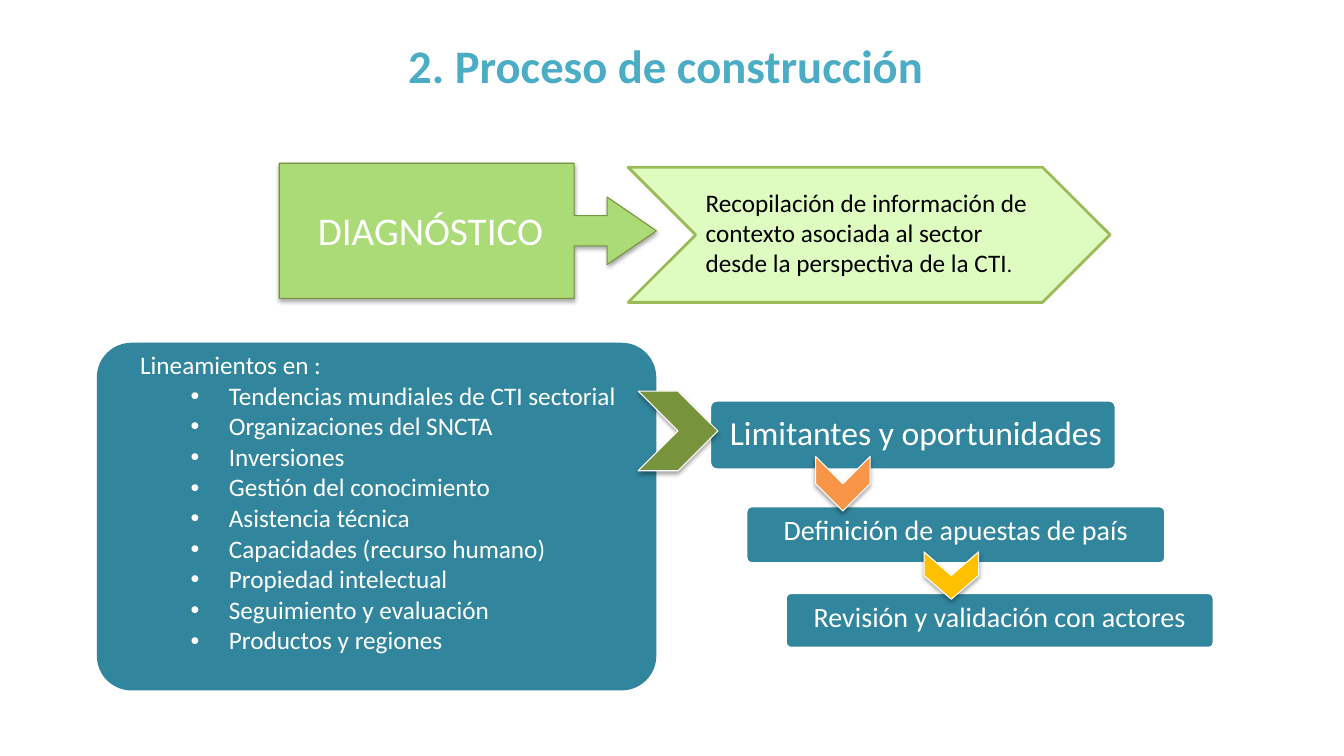
from pptx import Presentation
from pptx.util import Inches, Pt
from pptx.dml.color import RGBColor
from pptx.enum.shapes import MSO_SHAPE
from pptx.enum.text import MSO_ANCHOR, MSO_AUTO_SIZE, PP_ALIGN
from pptx.oxml import parse_xml
from pptx.oxml.ns import nsdecls
from lxml.etree import SubElement

WHITE = RGBColor(0xFF, 0xFF, 0xFF)
BLACK = RGBColor(0, 0, 0)
SKY = RGBColor(0x4B, 0xAC, 0xC6)
TEAL = RGBColor(0x31, 0x85, 0x9C)
PALE = RGBColor(0xDE, 0xFC, 0xC0)
LIME = RGBColor(0xAB, 0xDB, 0x77)
GREEN = RGBColor(0x9B, 0xBB, 0x59)
OLIVE = RGBColor(0x77, 0x93, 0x3C)
GOLD = RGBColor(0xFF, 0xC0, 0x00)
ORANGE = RGBColor(0xF7, 0x96, 0x46)

# Content
TITLE = "2. Proceso de construcción"
STAGE = "DIAGNÓSTICO"
DETAIL = "Recopilación de información de contexto asociada al sector desde la perspectiva de la CTI"
LEAD = "Lineamientos en :"
TOPICS = [
    "Tendencias mundiales de CTI sectorial",
    "Organizaciones del SNCTA",
    "Inversiones",
    "Gestión del conocimiento",
    "Asistencia técnica",
    "Capacidades (recurso humano)",
    "Propiedad intelectual",
    "Seguimiento y evaluación",
    "Productos y regiones",
]
GOAL = "Limitantes y oportunidades"

# Shapes from back to front: kind, box, fill, line, width, options
CHEVRON, ROUND = MSO_SHAPE.CHEVRON, MSO_SHAPE.ROUNDED_RECTANGLE
PARTS = [
    (CHEVRON, (6.23, 1.66, 4.78, 1.34), PALE, GREEN, 2, {}),
    (MSO_SHAPE.RIGHT_ARROW_CALLOUT, (2.77, 1.62, 3.74, 1.34), LIME, OLIVE, 0.75,
     {"adj": (0.223, 0.25, 0.365, 0.782), "shade": True}),
    (ROUND, (0.96, 3.4, 5.55, 3.45), TEAL, None, 0, {"adj": (0.1,)}),
    (ROUND, (7.04, 3.97, 4.03, 0.69), TEAL, WHITE, 2, {"adj": (0.1,)}),
    (CHEVRON, (6.33, 3.88, 0.79, 0.79), OLIVE, WHITE, 0.75, {"shade": True}),
    (ROUND, (7.4, 5.02, 4.16, 0.57), TEAL, WHITE, 2,
     {"adj": (0.1,), "text": "Definición de apuestas de país"}),
    (ROUND, (7.79, 5.88, 4.25, 0.55), TEAL, WHITE, 2,
     {"adj": (0.1,), "text": "Revisión y validación con actores"}),
    (CHEVRON, (9.2, 5.44, 0.47, 0.54), GOLD, WHITE, 0.75, {"turn": 90, "shade": True}),
    (CHEVRON, (8.09, 4.53, 0.54, 0.54), ORANGE, WHITE, 0.75, {"turn": 90, "shade": True}),
]


def place(shape, box):
    for name, value in zip(("left", "top", "width", "height"), box):
        setattr(shape, name, Inches(value))


def style(font, size, color, bold=False):
    look = {"name": "Calibri", "size": Pt(size), "bold": bold}
    for name, value in look.items():
        setattr(font, name, value)
    font.color.rgb = color


def setup(frame, anchor=MSO_ANCHOR.TOP):
    look = {"word_wrap": True, "auto_size": MSO_AUTO_SIZE.NONE, "vertical_anchor": anchor,
            "margin_left": Inches(0.1), "margin_right": Inches(0.1),
            "margin_top": Inches(0.05), "margin_bottom": Inches(0.05)}
    for name, value in look.items():
        setattr(frame, name, value)


def write(shape, text, size, color, align=PP_ALIGN.LEFT, bold=False):
    setup(shape.text_frame)
    para = shape.text_frame.paragraphs[0]
    para.alignment = align
    run = para.add_run()
    run.text = text
    style(run.font, size, color, bold)
    return para


def shade(shape):
    shape._element.spPr.append(parse_xml(
        f'<a:effectLst {nsdecls("a")}><a:outerShdw blurRad="{Pt(3.1)}" dist="{Pt(1.8)}" '
        'dir="5400000" rotWithShape="0"><a:srgbClr val="000000"><a:alpha val="35000"/>'
        '</a:srgbClr></a:outerShdw></a:effectLst>'))


def draw(slide, kind, box, fill, line, width, opts):
    shape = slide.shapes.add_shape(kind, *map(Inches, box))
    shape.fill.solid()
    shape.fill.fore_color.rgb = fill
    if line is None:
        shape.line.fill.background()
    else:
        shape.line.color.rgb = line
        shape.line.width = Pt(width)
    for i, value in enumerate(opts.get("adj", ())):
        shape.adjustments[i] = value
    shape.rotation = opts.get("turn", 0)
    if opts.get("shade"):
        shade(shape)
    else:
        shape.shadow.inherit = False
    if "text" in opts:
        write(shape, opts["text"], 20, WHITE, PP_ALIGN.CENTER)


def label(slide, box, text, size, color, align=PP_ALIGN.LEFT):
    shape = slide.shapes.add_textbox(*map(Inches, box))
    return shape, write(shape, text, size, color, align)


def fill_list(body):
    setup(body.text_frame)
    for i, text in enumerate([LEAD] + TOPICS):
        para = body.text_frame.paragraphs[0] if i == 0 else body.text_frame.add_paragraph()
        props = para._p.get_or_add_pPr()
        props.set("marL", str(Inches(0.88 if i else 0)))
        props.set("indent", str(Inches(-0.38 if i else 0)))
        if i:
            SubElement(props, props.tag.replace("pPr", "buFont"), typeface="Arial")
            SubElement(props, props.tag.replace("pPr", "buChar"), char="•")
        else:
            SubElement(props, props.tag.replace("pPr", "buNone"))
        gaps = {"line_spacing": 0.9, "space_before": Pt(0), "space_after": Pt(2.4)}
        for name, value in gaps.items():
            setattr(para, name, value)
        run = para.add_run()
        run.text = text
        style(run.font, 18, WHITE)


def main():
    deck = Presentation()
    deck.slide_width, deck.slide_height = Inches(13.33), Inches(7.5)
    slide = deck.slides.add_slide(deck.slide_layouts[1])
    title, body = slide.placeholders[0], slide.placeholders[1]

    # Title
    place(title, (0.11, 0.32, 12.99, 0.63))
    write(title, TITLE, 33.3, SKY, PP_ALIGN.CENTER, True)

    # Diagram shapes
    for part in PARTS:
        draw(slide, *part)

    # Diagnosis row
    label(slide, (2.89, 2, 2.76, 0.57), STAGE, 28, WHITE, PP_ALIGN.CENTER)
    note, para = label(slide, (6.98, 1.76, 3.34, 1.09), DETAIL, 18, BLACK)
    setup(note.text_frame, MSO_ANCHOR.MIDDLE)
    note.text_frame.margin_left = Inches(0.02)
    note.text_frame.margin_right = 0
    stop = para.add_run()
    stop.text = "."
    style(stop.font, 15, BLACK)

    # Guideline list, in front of its panel
    place(body, (1.29, 3.45, 5, 3.24))
    fill_list(body)
    slide.shapes._spTree.append(body._element)

    # Goal heading
    para = label(slide, (7.14, 4.08, 4.15, 0.46), GOAL, 24, WHITE)[1]
    para.line_spacing = 0.9

    deck.save("out.pptx")


if __name__ == "__main__":
    main()
